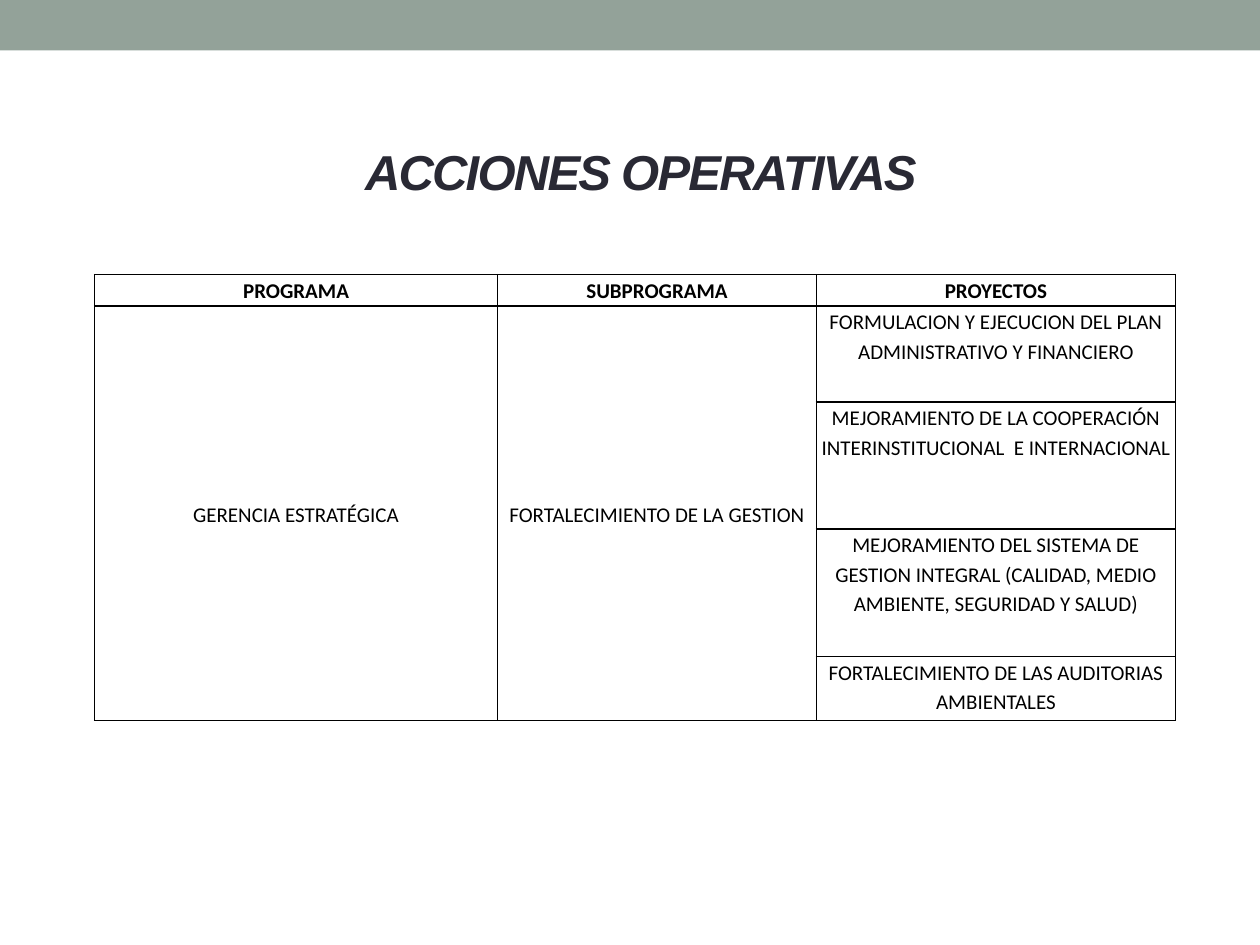
from lxml import etree
from pptx import Presentation
from pptx import util as u
from pptx.dml.color import RGBColor
from pptx.enum import shapes, text
from pptx.oxml import ns

COLORS = {"band": "93A299", "title": "292934", "ink": "000000", "cell": "FFFFFF"}
HEADERS = ["PROGRAMA", "SUBPROGRAMA", "PROYECTOS"]
PROGRAM = "GERENCIA ESTRATÉGICA"
SUBPROGRAM = "FORTALECIMIENTO DE LA GESTION"
PROJECTS = [
    "FORMULACION Y EJECUCION DEL PLAN ADMINISTRATIVO Y FINANCIERO",
    "MEJORAMIENTO DE LA COOPERACIÓN INTERINSTITUCIONAL  E INTERNACIONAL",
    "MEJORAMIENTO DEL SISTEMA DE GESTION INTEGRAL (CALIDAD, MEDIO AMBIENTE, SEGURIDAD Y SALUD)",
    "FORTALECIMIENTO DE LAS AUDITORIAS AMBIENTALES",
]
COL_WIDTHS = [3.2, 2.53, 2.85]
ROW_HEIGHTS = [0.25, 0.76, 1.01, 1.01, 0.51]


def rgb(name):
    """Return the named colour."""
    return RGBColor.from_string(COLORS[name])


def add_run(p, words, font, size, color, bold=False, italic=False):
    """Add a formatted run to a paragraph."""
    r = p.add_run()
    r.text = words
    r.font.name, r.font.size = font, u.Pt(size)
    r.font.bold, r.font.italic = bold, italic
    r.font.color.rgb = rgb(color)
    return r


def add_band(s, x, y, w, h):
    """Draw the coloured band across the top."""
    sp = s.shapes.add_shape(shapes.MSO_SHAPE.RECTANGLE, *map(u.Inches, (x, y, w, h)))
    sp.shadow.inherit = False
    sp.fill.solid()
    sp.fill.fore_color.rgb = rgb("band")
    sp.line.fill.background()


def add_title(s, x, y, w, h):
    """Place the centred slide title."""
    tf = s.shapes.add_textbox(*map(u.Inches, (x, y, w, h))).text_frame
    tf.word_wrap = True
    tf.vertical_anchor = text.MSO_ANCHOR.MIDDLE
    p = tf.paragraphs[0]
    p.alignment = text.PP_ALIGN.CENTER
    r = add_run(p, "ACCIONES OPERATIVAS", "Arial", 28, "title", bold=True, italic=True)
    r.font._element.set("spc", "-100")


def style_cell(cell):
    """Give a cell its borders, fill and margins."""
    tc_pr = cell._tc.get_or_add_tcPr()
    for side in ("a:lnL", "a:lnR", "a:lnT", "a:lnB"):
        ln = etree.SubElement(tc_pr, ns.qn(side), w=str(u.Pt(1)))
        fill = etree.SubElement(ln, ns.qn("a:solidFill"))
        etree.SubElement(fill, ns.qn("a:srgbClr"), val=COLORS["ink"])
    cell.fill.solid()
    cell.fill.fore_color.rgb = rgb("cell")
    cell.margin_left = cell.margin_right = u.Inches(0.02)
    cell.margin_top = cell.margin_bottom = 0


def write_cell(cell, words, bold=False):
    """Write centred text in a cell."""
    p = cell.text_frame.paragraphs[0]
    p.alignment = text.PP_ALIGN.CENTER
    p.line_spacing = 1.15
    add_run(p, words, "Calibri", 12, "ink", bold=bold)


def add_actions_table(s, x, y, w, h):
    """Build the table of programme, subprogramme and projects."""
    frame = s.shapes.add_table(len(ROW_HEIGHTS), len(COL_WIDTHS), *map(u.Inches, (x, y, w, h)))
    table = frame.table
    table.first_row = table.horz_banding = False
    for col, width in zip(table.columns, COL_WIDTHS):
        col.width = u.Inches(w * width / sum(COL_WIDTHS))
    for row, height in zip(table.rows, ROW_HEIGHTS):
        row.height = u.Inches(h * height / sum(ROW_HEIGHTS))
    for cell in table.iter_cells():
        style_cell(cell)
    for c, words in enumerate(HEADERS):
        write_cell(table.cell(0, c), words, bold=True)
    for c, words in enumerate((PROGRAM, SUBPROGRAM)):
        cell = table.cell(1, c)
        cell.merge(table.cell(len(PROJECTS), c))
        cell.vertical_anchor = text.MSO_ANCHOR.MIDDLE
        write_cell(cell, words)
    for i, words in enumerate(PROJECTS, 1):
        write_cell(table.cell(i, 2), words)


def main():
    """Build and save the slide."""
    prs = Presentation()
    prs.slide_width, prs.slide_height = u.Inches(10), u.Inches(7.5)
    s = prs.slides.add_slide(prs.slide_layouts[6])
    add_band(s, 0, 0, 10, 0.4)
    add_title(s, 0.28, 0.92, 9.61, 0.87)
    add_actions_table(s, 0.75, 2.18, 8.58, 3.54)
    prs.save("out.pptx")


if __name__ == "__main__":
    main()
